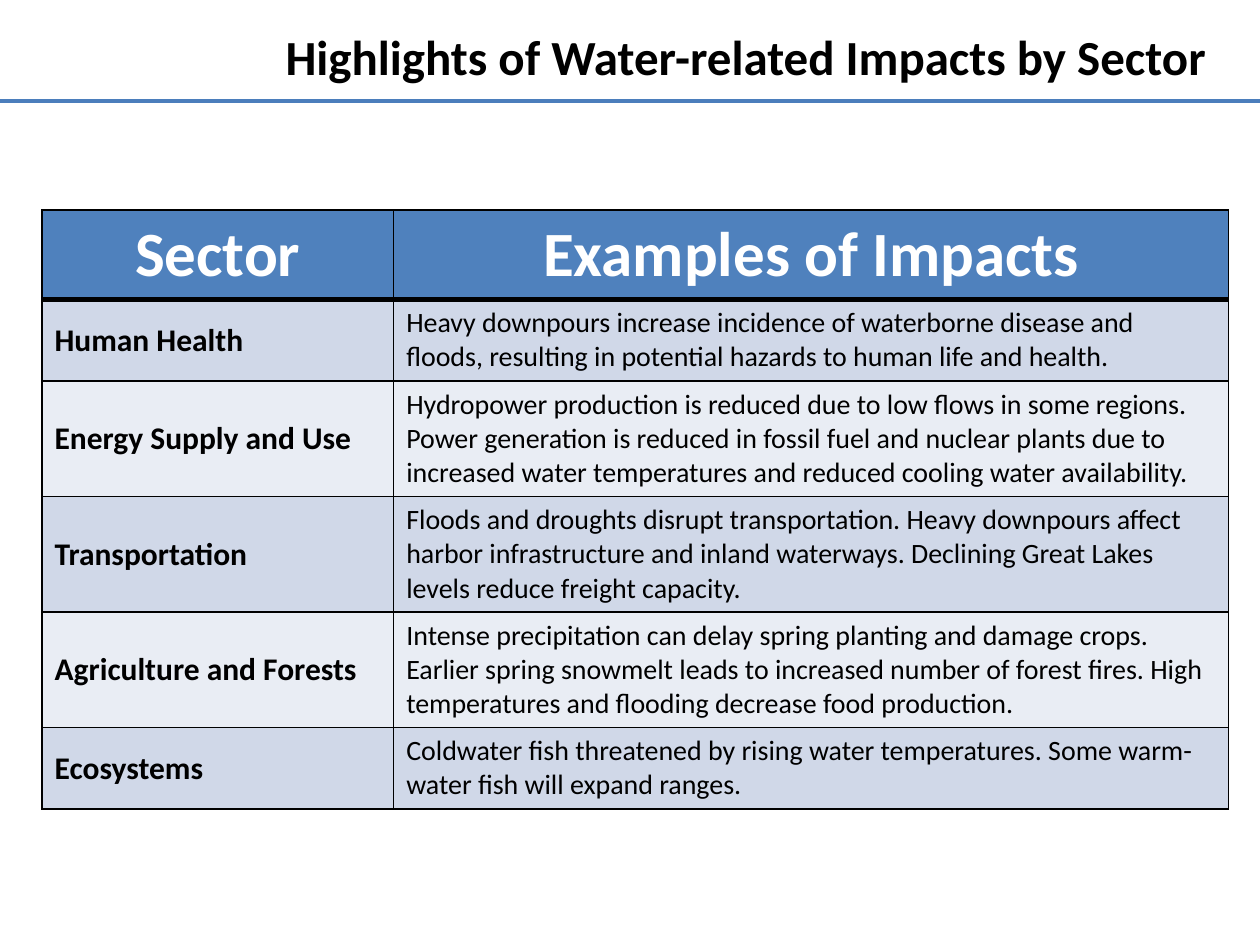
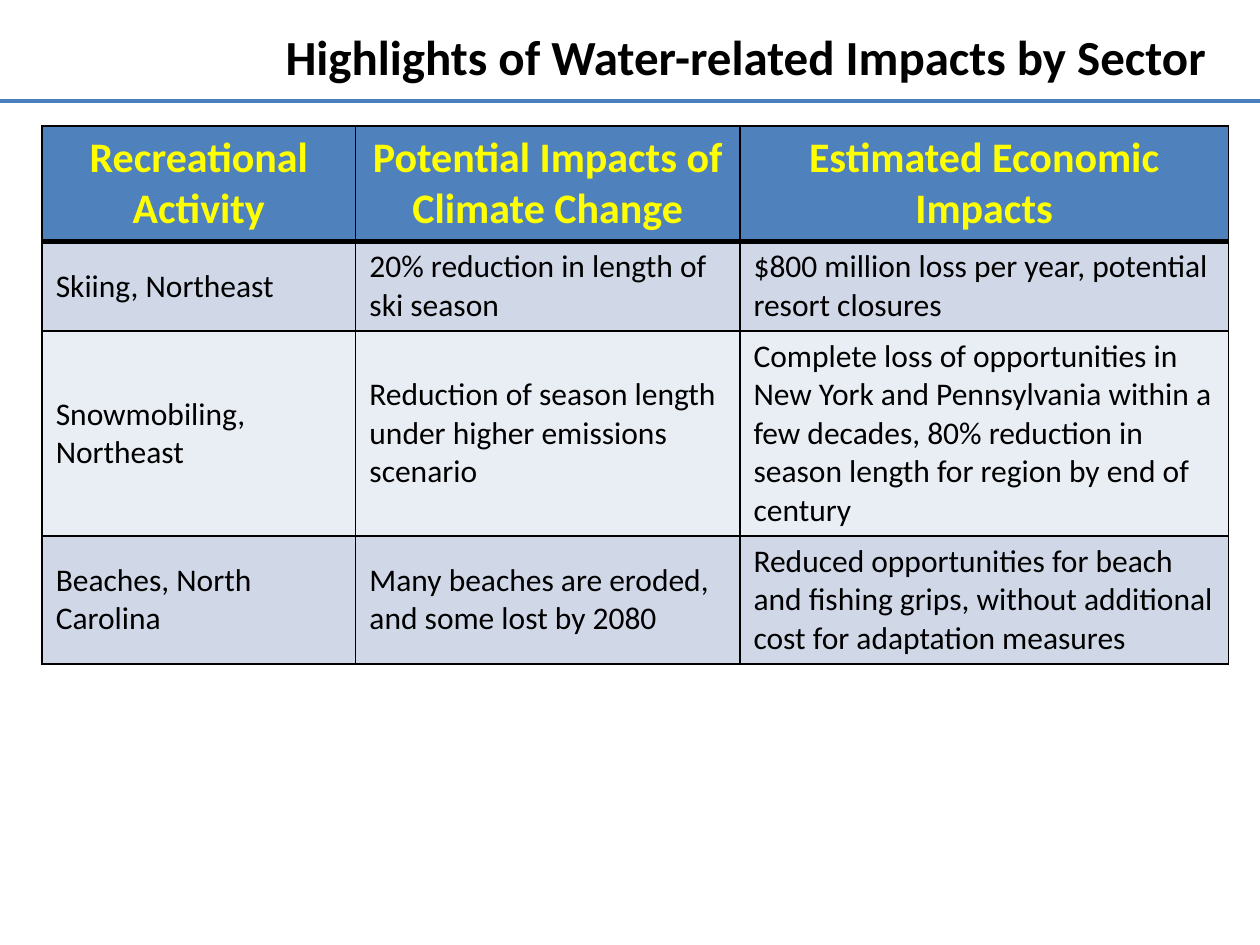
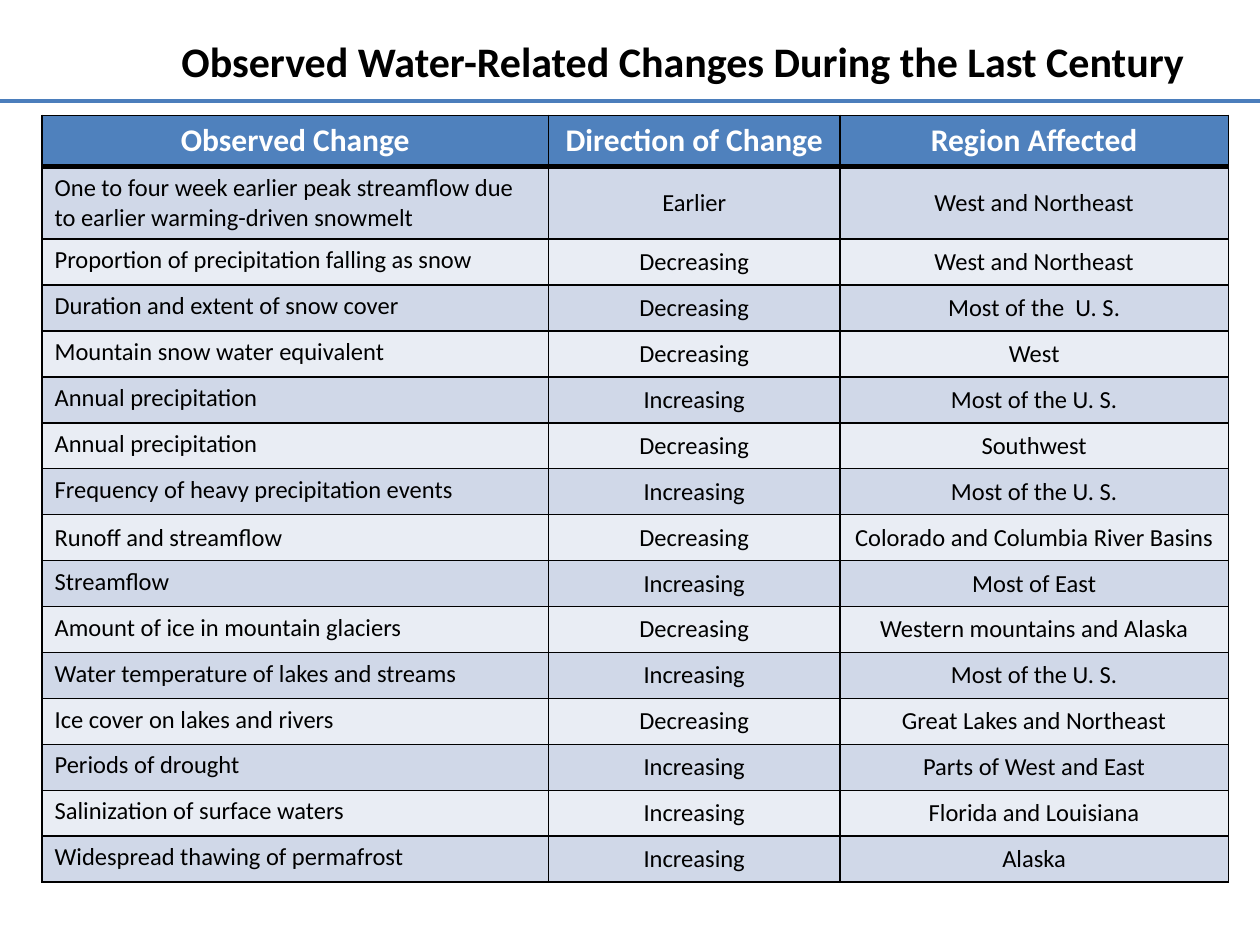
from lxml.etree import SubElement
from pptx import Presentation
from pptx.dml.color import RGBColor
from pptx.enum.shapes import MSO_CONNECTOR
from pptx.enum.text import MSO_ANCHOR, PP_ALIGN
from pptx.oxml.ns import qn
from pptx.util import Pt

BLACK = RGBColor(0x00, 0x00, 0x00)
WHITE = RGBColor(0xFF, 0xFF, 0xFF)
YELLOW = RGBColor(0xFF, 0xFF, 0x00)
HEADER_BLUE = RGBColor(0x4F, 0x81, 0xBD)
RULE_BLUE = RGBColor(0x4B, 0x7E, 0xBC)
BANDS = (RGBColor(0xD0, 0xD8, 0xE8), RGBColor(0xE9, 0xED, 0xF4))

FONT = "Calibri"
PAGE_WIDTH, PAGE_HEIGHT = 720, 540
TABLE_LEFT = 24
RULE_TOP = 57.6
THIN, THICK = 1, 3

SECTOR_TITLE = "Highlights of Water-related Impacts by Sector"
SECTOR_BOX = (28, 6.5, 668, 50.4)

SECTORS = [
    ("Sector", "Examples of Impacts"),
    ("Human Health",
     "Heavy downpours increase incidence of waterborne disease and floods, "
     "resulting in potential hazards to human life and health."),
    ("Energy Supply and Use",
     "Hydropower production is reduced due to low flows in some regions. "
     "Power generation is reduced in fossil fuel and nuclear plants due to "
     "increased water temperatures and reduced cooling water availability."),
    ("Transportation",
     "Floods and droughts disrupt transportation. Heavy downpours affect "
     "harbor infrastructure and inland waterways. Declining Great Lakes "
     "levels reduce freight capacity."),
    ("Agriculture and Forests",
     "Intense precipitation can delay spring planting and damage crops. "
     "Earlier spring snowmelt leads to increased number of forest fires. "
     "High temperatures and flooding decrease food production."),
    ("Ecosystems",
     "Coldwater fish threatened by rising water temperatures. "
     "Some warm-water fish will expand ranges."),
]

RECREATION = [
    ("Recreational Activity", "Potential Impacts of Climate Change",
     "Estimated Economic Impacts"),
    ("Skiing, Northeast", "20% reduction in length of ski season",
     "$800 million loss per year, potential resort closures"),
    ("Snowmobiling, Northeast",
     "Reduction of season length under higher emissions scenario",
     "Complete loss of opportunities in New York and Pennsylvania within a "
     "few decades, 80% reduction in season length for region by end of century"),
    ("Beaches, North Carolina", "Many beaches are eroded, and some lost by 2080",
     "Reduced opportunities for beach and fishing grips, without additional "
     "cost for adaptation measures"),
]

CHANGES = [
    ("Observed Change", "Direction of Change", "Region Affected"),
    ("One to four week earlier peak streamflow due to earlier warming-driven snowmelt",
     "Earlier", "West and Northeast"),
    ("Proportion of precipitation falling as snow", "Decreasing", "West and Northeast"),
    ("Duration and extent of snow cover", "Decreasing", "Most of the  U. S."),
    ("Mountain snow water equivalent", "Decreasing", "West"),
    ("Annual precipitation", "Increasing", "Most of the U. S."),
    ("Annual precipitation", "Decreasing", "Southwest"),
    ("Frequency of heavy precipitation events", "Increasing", "Most of the U. S."),
    ("Runoff and streamflow", "Decreasing", "Colorado and Columbia River Basins"),
    ("Streamflow", "Increasing", "Most of East"),
    ("Amount of ice in mountain glaciers", "Decreasing", "Western mountains and Alaska"),
    ("Water temperature of lakes and streams", "Increasing", "Most of the U. S."),
    ("Ice cover on lakes and rivers", "Decreasing", "Great Lakes and Northeast"),
    ("Periods of drought", "Increasing", "Parts of West and East"),
    ("Salinization of surface waters", "Increasing", "Florida and Louisiana"),
    ("Widespread thawing of permafrost", "Increasing", "Alaska"),
]


def format_text(frame, size, color, bold, align):
    for para in frame.paragraphs:
        para.alignment = align
        for span in para.runs:
            span.font.name = FONT
            span.font.size = Pt(size)
            span.font.bold = bold
            span.font.color.rgb = color


def add_page(deck, title, box, size):
    """Add a slide with the rule and a right-aligned title."""
    page = deck.slides.add_slide(deck.slide_layouts[5])
    rule = page.shapes.add_connector(
        MSO_CONNECTOR.STRAIGHT, 0, Pt(RULE_TOP), Pt(PAGE_WIDTH), Pt(RULE_TOP))
    rule.line.color.rgb = RULE_BLUE
    rule.line.width = Pt(2.25)
    SubElement(rule.element.spPr, qn("a:effectLst"))

    heading = page.shapes.title
    heading.left, heading.top, heading.width, heading.height = map(Pt, box)
    heading.text_frame.text = title
    heading.text_frame.vertical_anchor = MSO_ANCHOR.MIDDLE
    format_text(heading.text_frame, size, BLACK, True, PP_ALIGN.RIGHT)
    return page


def set_borders(cell, top, bottom):
    properties = cell._tc.get_or_add_tcPr()
    for side, width in (("L", THIN), ("R", THIN), ("T", top), ("B", bottom)):
        line = SubElement(properties, qn(f"a:ln{side}"), w=str(Pt(width)))
        fill = SubElement(line, qn("a:solidFill"))
        SubElement(fill, qn("a:srgbClr"), val=str(BLACK))


def add_banded_table(page, records, top, widths, heights, header_size, header_color,
                     sizes, aligns, anchors, bold_first=False, inset=7.2):
    """Add a table; sizes, aligns and anchors give the body style per column."""
    table = page.shapes.add_table(
        len(records), len(widths), Pt(TABLE_LEFT), Pt(top),
        Pt(sum(widths)), Pt(sum(heights))).table
    for column, width in zip(table.columns, widths):
        column.width = Pt(width)
    for row, height in zip(table.rows, heights):
        row.height = Pt(height)

    for r, record in enumerate(records):
        for c, words in enumerate(record):
            cell = table.cell(r, c)
            set_borders(cell, THICK if r == 1 else THIN, THICK if r == 0 else THIN)
            cell.fill.solid()
            cell.margin_left = cell.margin_right = Pt(inset)
            cell.text_frame.text = words
            if r == 0:
                cell.fill.fore_color.rgb = HEADER_BLUE
                format_text(cell.text_frame, header_size, header_color, True,
                            PP_ALIGN.CENTER)
            else:
                cell.fill.fore_color.rgb = BANDS[(r - 1) % 2]
                cell.vertical_anchor = anchors[c]
                format_text(cell.text_frame, sizes[c], BLACK,
                            bold_first and c == 0, aligns[c])
    return table


def add_sector_page(deck):
    page = add_page(deck, SECTOR_TITLE, SECTOR_BOX, 28)
    add_banded_table(
        page, SECTORS, 120, (201, 477), (51, 46.5, 66, 66, 66, 46.5), 36, WHITE,
        sizes=(18, 16), aligns=[PP_ALIGN.LEFT] * 2,
        anchors=(MSO_ANCHOR.MIDDLE, MSO_ANCHOR.TOP), bold_first=True)


def add_recreation_page(deck):
    page = add_page(deck, SECTOR_TITLE, SECTOR_BOX, 28)
    add_banded_table(
        page, RECREATION, 72, (179.25, 219.5, 279.25), (66, 51, 117, 73), 24, YELLOW,
        sizes=[18] * 3, aligns=[PP_ALIGN.LEFT] * 3,
        anchors=[MSO_ANCHOR.MIDDLE] * 3, inset=7.9)


def add_changes_page(deck):
    page = add_page(deck, "Observed Water-Related Changes During the Last Century",
                    (36, 12, 648, 45), 24)
    table = add_banded_table(
        page, CHANGES, 66, (289.5, 166.5, 222), [29.25, 41.4] + [26.25] * 14, 18, WHITE,
        sizes=[14] * 3, aligns=(PP_ALIGN.LEFT, PP_ALIGN.CENTER, PP_ALIGN.CENTER),
        anchors=(MSO_ANCHOR.TOP, MSO_ANCHOR.MIDDLE, MSO_ANCHOR.MIDDLE))
    runoff_row = [record[0] for record in CHANGES].index("Runoff and streamflow")
    table.cell(runoff_row, 0).vertical_anchor = MSO_ANCHOR.MIDDLE


def main():
    deck = Presentation()
    deck.slide_width, deck.slide_height = Pt(PAGE_WIDTH), Pt(PAGE_HEIGHT)
    add_sector_page(deck)
    add_recreation_page(deck)
    add_changes_page(deck)
    deck.save("out.pptx")


if __name__ == "__main__":
    main()
